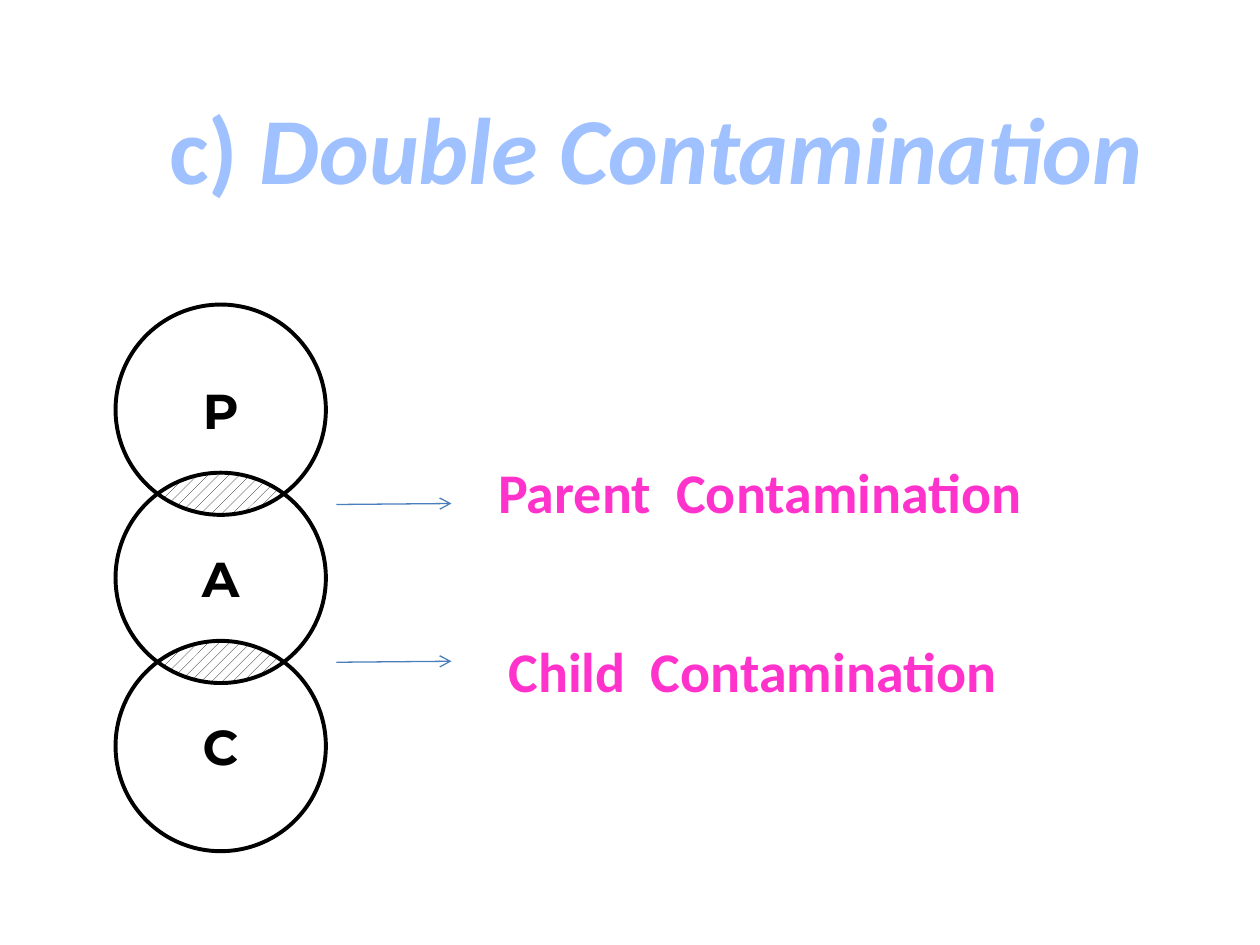
import math

from lxml import etree
from pptx import Presentation
from pptx.dml.color import RGBColor
from pptx.enum import dml, shapes, text
from pptx.oxml import ns
from pptx.util import Cm, Pt

BLACK = RGBColor(0x00, 0x00, 0x00)
WHITE = RGBColor(0xFF, 0xFF, 0xFF)
ARROW_BLUE = RGBColor(0x4B, 0x7E, 0xBC)
TITLE_BLUE = RGBColor(0xA0, 0xC1, 0xFF)
PINK = RGBColor(0xFF, 0x33, 0xCC)

RADIUS = 2.12
SPACING = 3.39
CENTER_X = 4.45
FIRST_Y = 8.26
ARC_STEPS = 12


def style_font(font, name, size, color):
    font.name = name
    font.size = Pt(size)
    font.bold = True
    font.color.rgb = color


def add_label(page, left, top, width, height, parts, size, color, wrap):
    box = page.shapes.add_textbox(Cm(left), Cm(top), Cm(width), Cm(height))
    box.text_frame.word_wrap = wrap
    para = box.text_frame.paragraphs[0]
    para.alignment = text.PP_ALIGN.CENTER
    for words, italic in parts:
        span = para.add_run()
        span.text = words
        style_font(span.font, "Calibri", size, color)
        span.font.italic = italic


deck = Presentation()
deck.slide_width = Cm(25.4)
deck.slide_height = Cm(19.05)
page = deck.slides.add_slide(deck.slide_layouts[6])

for arrow_y in (13.35, 10.17):
    arrow = page.shapes.add_connector(
        shapes.MSO_CONNECTOR.STRAIGHT, Cm(6.78), Cm(arrow_y), Cm(9.1), Cm(arrow_y - 0.02)
    )
    arrow.line.color.rgb = ARROW_BLUE
    arrow.line.width = Pt(0.75)
    outline = arrow.line._get_or_add_ln()
    etree.SubElement(outline, ns.qn("a:tailEnd"), type="arrow")
    etree.SubElement(arrow._element.spPr, ns.qn("a:effectLst"))

half_angle = math.acos(SPACING / 2 / RADIUS)
angles = [half_angle * (2 * step / ARC_STEPS - 1) for step in range(ARC_STEPS + 1)]
arc = [(RADIUS * math.sin(a), RADIUS * math.cos(a) - SPACING / 2) for a in angles]
lens = [(x, -y) for x, y in arc] + [(x, y) for x, y in reversed(arc)]

for gap in (1, 0):
    middle_y = FIRST_Y + (gap + 0.5) * SPACING
    points = [(Cm(CENTER_X + x), Cm(middle_y + y)) for x, y in lens]
    builder = page.shapes.build_freeform(*points[0])
    builder.add_line_segments(points[1:], close=True)
    overlap = builder.convert_to_shape()
    overlap.shadow.inherit = False
    overlap.fill.patterned()
    overlap.fill.pattern = dml.MSO_PATTERN.PERCENT_20
    overlap.fill.fore_color.rgb = BLACK
    overlap.fill.back_color.rgb = WHITE
    overlap.line.fill.background()

for row, letter in enumerate("PAC"):
    circle = page.shapes.add_shape(
        shapes.MSO_SHAPE.OVAL,
        Cm(CENTER_X - RADIUS),
        Cm(FIRST_Y + row * SPACING - RADIUS),
        Cm(2 * RADIUS),
        Cm(2 * RADIUS),
    )
    circle.shadow.inherit = False
    circle.fill.background()
    circle.line.color.rgb = BLACK
    circle.line.width = Pt(2.25)
    frame = circle.text_frame
    frame.text = letter
    frame.word_wrap = False
    frame.vertical_anchor = text.MSO_ANCHOR.MIDDLE
    para = frame.paragraphs[0]
    para.alignment = text.PP_ALIGN.CENTER
    para.space_before = Pt(5.6)
    style_font(para.runs[0].font, "Montserrat", 28, BLACK)

title = [("c) ", False), ("Double Contamination", True)]
add_label(page, 2.33, 1.69, 21.8, 2.57, title, 54, TITLE_BLUE, True)
add_label(page, 9.74, 9.1, 11.17, 1.62, [("Parent  Contamination", False)], 32, PINK, False)
add_label(page, 9.95, 12.7, 10.45, 1.62, [("Child  Contamination", False)], 32, PINK, False)

deck.save("out.pptx")
